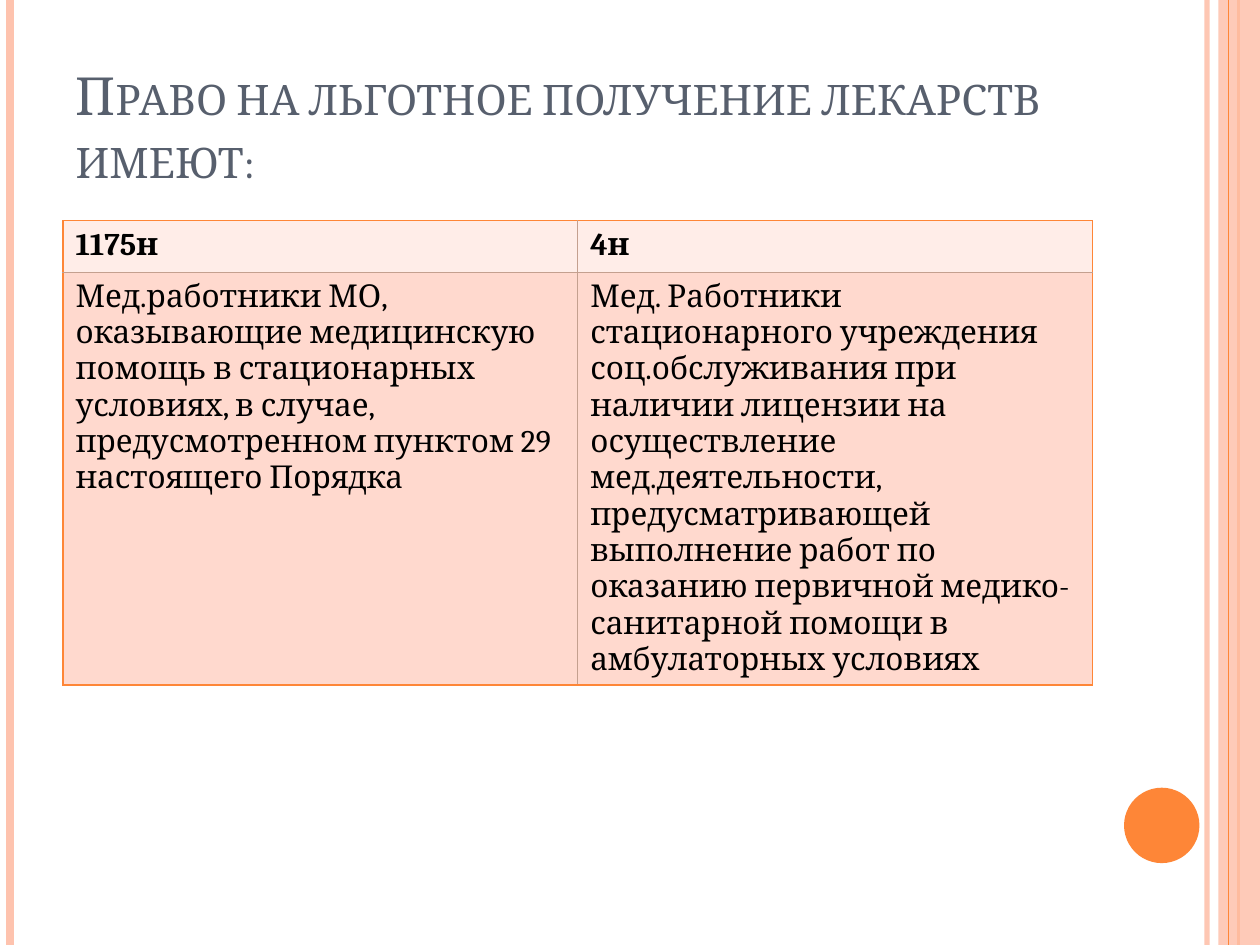
from dataclasses import dataclass

from lxml import etree
from pptx import Presentation
from pptx.dml.color import RGBColor
from pptx.enum.shapes import MSO_CONNECTOR, MSO_SHAPE
from pptx.enum.text import MSO_ANCHOR, MSO_AUTO_SIZE, PP_ALIGN
from pptx.oxml.ns import qn
from pptx.util import Cm, Pt

LINE = MSO_CONNECTOR.STRAIGHT
RECT, DISC = MSO_SHAPE.RECTANGLE, MSO_SHAPE.OVAL
LEFT, LOW = PP_ALIGN.LEFT, MSO_ANCHOR.BOTTOM
FIXED = MSO_AUTO_SIZE.NONE

ORANGE = RGBColor(0xFE, 0x86, 0x37)
PEACH = RGBColor(0xFE, 0xC3, 0xAE)
SLATE = RGBColor(0x57, 0x5F, 0x6D)
BLACK = RGBColor(0, 0, 0)
PALE = RGBColor(0xFF, 0xED, 0xE8)
BLUSH = RGBColor(0xFF, 0xD9, 0xCE)
TAUPE = RGBColor(0xC4, 0xA0, 0x8F)

WIDE, HIGH = 25.4, 19.05
FACE = "Cambria"


@dataclass
class Rule:
    x: float
    width: float
    color: RGBColor
    alpha: int = 100


@dataclass
class Form:
    kind: int
    box: tuple
    color: RGBColor
    alpha: int = 100


@dataclass
class Row:
    texts: tuple
    height: float
    fill: RGBColor
    bold: bool


# Back to front
DECOR = [
    Rule(24.33, 3, PEACH, 93),
    Rule(0.2, 4.5, PEACH),
    Rule(24.97, 1.5, ORANGE),
    Form(RECT, (24.56, 0, 0.84, HIGH), PEACH, 87),
    Rule(24.77, 0.75, ORANGE),
    Form(DISC, (22.66, 15.88, 1.52, 1.52), ORANGE),
]

ROWS = [
    Row(("1175н", "4н"), 1.04, PALE, True),
    Row((
        "Мед.работники МО, оказывающие медицинскую помощь в стационарных "
        "условиях, в случае, предусмотренном пунктом 29 настоящего Порядка",
        "Мед. Работники стационарного учреждения соц.обслуживания при "
        "наличии лицензии на осуществление мед.деятельности, "
        "предусматривающей выполнение работ по оказанию первичной "
        "медико-санитарной помощи в амбулаторных условиях",
    ), 7.87, BLUSH, False),
]


def style(item, form: dict) -> None:
    for name, value in form.items():
        setattr(item, name, value)


def fade(node, alpha: int) -> None:
    """Make the solid colour inside node partly transparent."""
    if alpha < 100:
        color = next(node.iter(qn("a:srgbClr")))
        etree.SubElement(color, qn("a:alpha"), val=str(alpha * 1000))


def draw_rule(slide, rule: Rule) -> None:
    x = Cm(rule.x)
    line = slide.shapes.add_connector(LINE, x, 0, x, Cm(HIGH))
    line.line.color.rgb = rule.color
    line.line.width = Pt(rule.width)
    props = line._element.spPr
    fade(props, rule.alpha)
    etree.SubElement(props, qn("a:effectLst"))


def draw_form(slide, form: Form) -> None:
    shape = slide.shapes.add_shape(form.kind, *map(Cm, form.box))
    shape.shadow.inherit = False
    shape.fill.solid()
    shape.fill.fore_color.rgb = form.color
    shape.line.fill.background()
    fade(shape._element.spPr, form.alpha)


def write(frame, text: str, color: RGBColor, form: dict):
    par = frame.paragraphs[0]
    par.alignment = LEFT
    run = par.add_run()
    run.text = text
    style(run.font, {"name": FACE, **form})
    run.font.color.rgb = color
    return run


def edge(cell, sides: dict) -> None:
    """Border a cell: orange on the outside, thin taupe within."""
    props = cell._tc.get_or_add_tcPr()
    for spot, (side, outer) in enumerate(sides.items()):
        width, color = (Pt(1), ORANGE) if outer else (Pt(0.5), TAUPE)
        line = etree.Element(qn(f"a:ln{side}"), w=str(width))
        fill = etree.SubElement(line, qn("a:solidFill"))
        etree.SubElement(fill, qn("a:srgbClr"), val=str(color))
        props.insert(spot, line)


def draw_title(slide) -> None:
    title = slide.shapes.title
    style(title, {"left": Cm(1.27), "top": Cm(0.76),
                  "width": Cm(20.75), "height": Cm(3.18)})
    style(title.text_frame, {"word_wrap": True, "auto_size": FIXED,
                             "vertical_anchor": LOW})
    run = write(title.text_frame, "Право на льготное получение лекарств имеют:",
                SLATE, {"size": Pt(30)})
    run.font._element.set("cap", "small")


def draw_table(slide, rows: list[Row]) -> None:
    cols = len(rows[0].texts)
    high = sum(row.height for row in rows)
    table = slide.shapes.add_table(len(rows), cols, Cm(1.27), Cm(4.45),
                                   Cm(20.75), Cm(high)).table
    for r, row in enumerate(rows):
        table.rows[r].height = Cm(row.height)
        for c, text in enumerate(row.texts):
            cell = table.cell(r, c)
            cell.fill.solid()
            cell.fill.fore_color.rgb = row.fill
            write(cell.text_frame, text, BLACK,
                  {"size": Pt(18), "bold": row.bold})
            edge(cell, {"L": c == 0, "R": c == cols - 1,
                        "T": r == 0, "B": r == len(rows) - 1})


def main() -> None:
    deck = Presentation()
    style(deck, {"slide_width": Cm(WIDE), "slide_height": Cm(HIGH)})
    slide = deck.slides.add_slide(deck.slide_layouts.get_by_name("Title Only"))

    # Side stripes and disc
    for part in DECOR:
        draw = draw_rule if isinstance(part, Rule) else draw_form
        draw(slide, part)

    # Content
    draw_title(slide)
    draw_table(slide, ROWS)
    deck.save("out.pptx")


if __name__ == "__main__":
    main()
